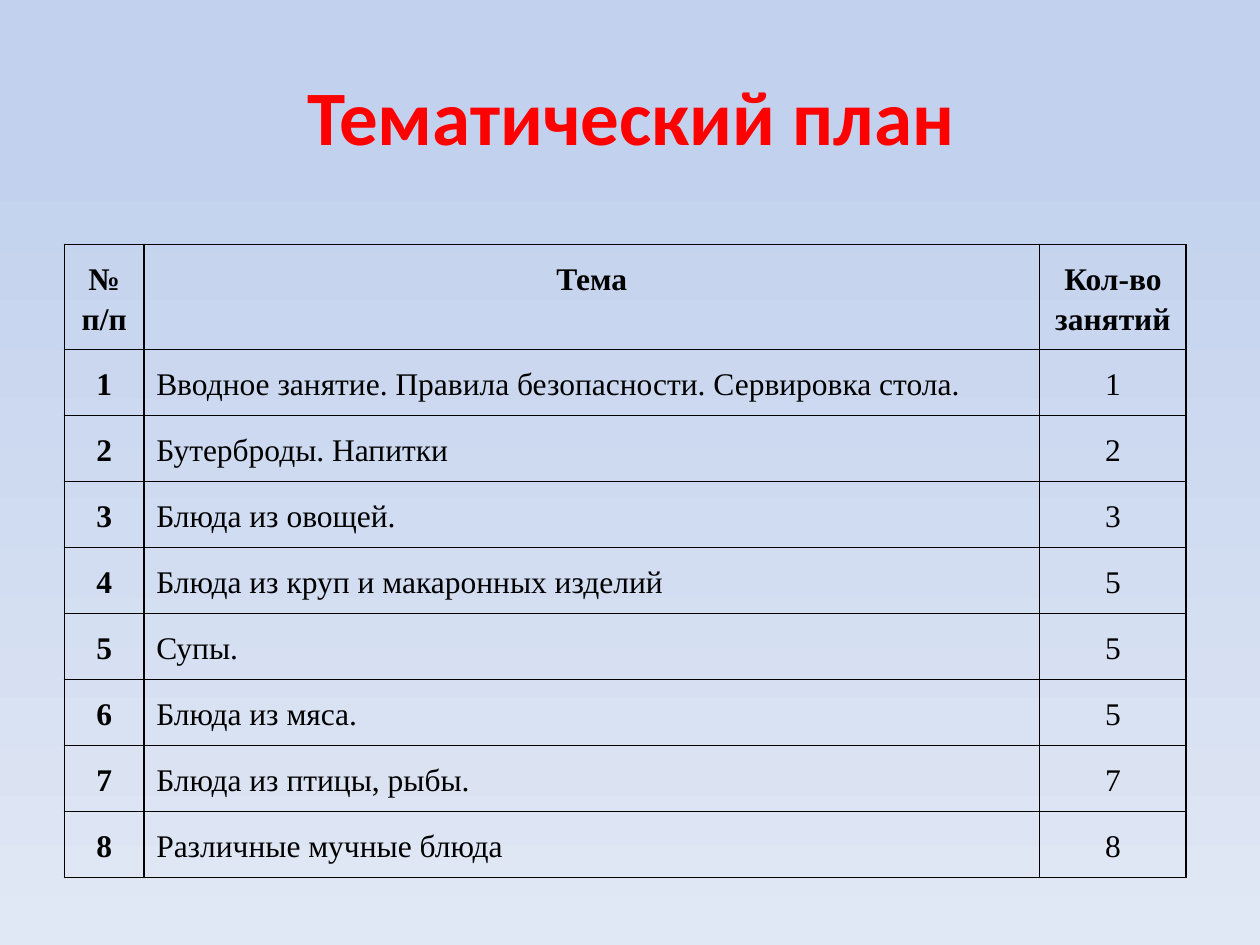
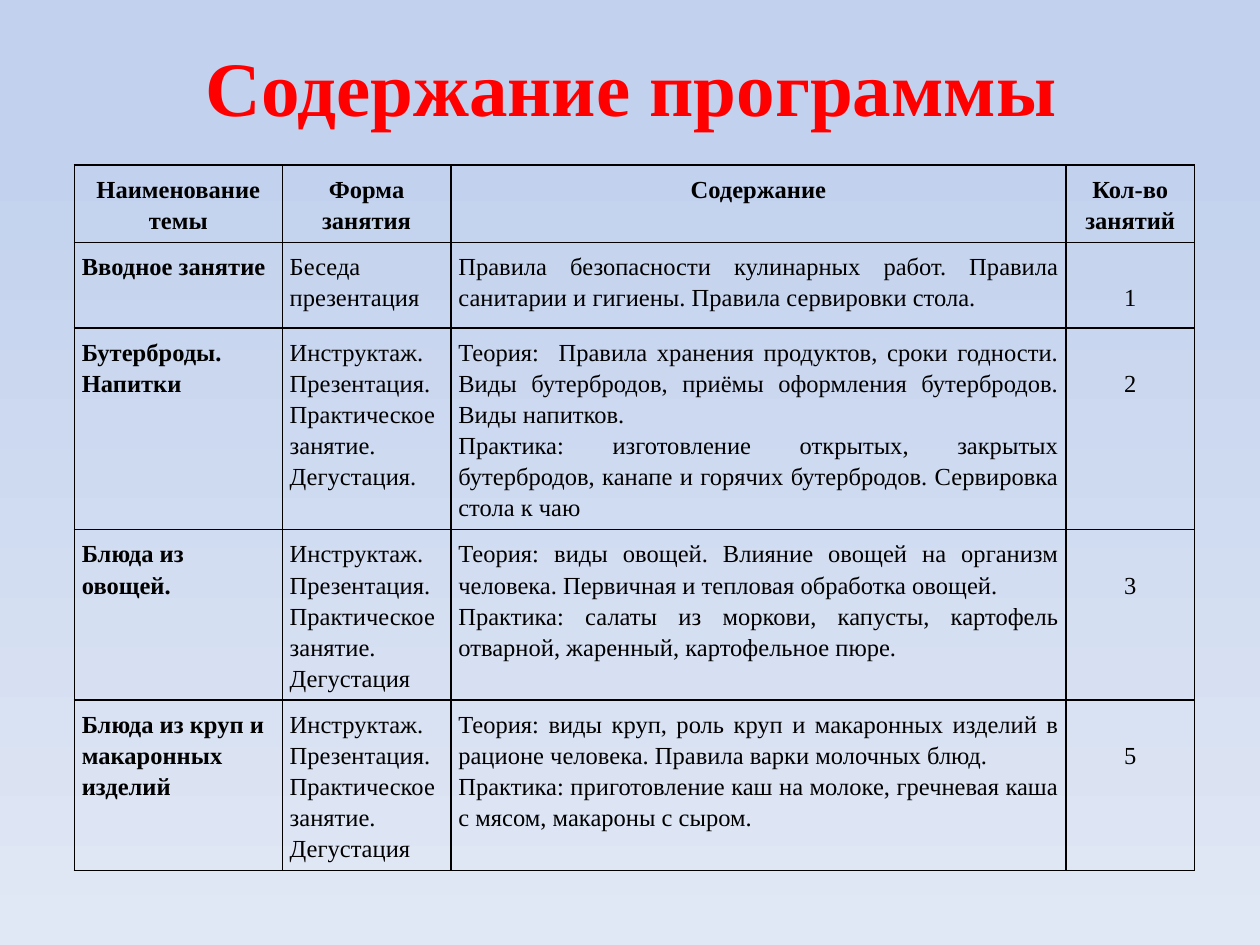
"""Builds two slides of a cookery course: the topic plan and the programme contents."""
import pptx
import pptx.util
import pptx.dml.color
import pptx.enum.text
import pptx.oxml
import pptx.oxml.ns

Cm, Pt = pptx.util.Cm, pptx.util.Pt
LEFT, CENTER, JUSTIFY = (
    pptx.enum.text.PP_ALIGN.LEFT,
    pptx.enum.text.PP_ALIGN.CENTER,
    pptx.enum.text.PP_ALIGN.JUSTIFY,
)
COLORS = {"sky": "C2D1ED", "pale": "E1E8F5", "title": "FF0000", "ink": "000000"}
TABLE_FONT = "Times New Roman"
PRACTICE = "Инструктаж. Презентация. Практическое занятие. Дегустация"

TOPICS = [
    ("Вводное занятие. Правила безопасности. Сервировка стола.", 1),
    ("Бутерброды. Напитки", 2),
    ("Блюда из овощей.", 3),
    ("Блюда из круп и макаронных изделий", 5),
    ("Супы.", 5),
    ("Блюда из мяса.", 5),
    ("Блюда из птицы, рыбы.", 7),
    ("Различные мучные блюда", 8),
]

CONTENTS = [
    ("Вводное занятие", "Беседа презентация",
     "Правила безопасности кулинарных работ. Правила санитарии и гигиены. "
     "Правила сервировки стола.", 1),
    ("Бутерброды. Напитки", PRACTICE + ".",
     "Теория:  Правила хранения продуктов, сроки годности. Виды бутербродов, "
     "приёмы оформления бутербродов. Виды напитков.\n"
     "Практика: изготовление открытых, закрытых бутербродов, канапе и горячих "
     "бутербродов. Сервировка стола к чаю", 2),
    ("Блюда из овощей.", PRACTICE,
     "Теория: виды овощей. Влияние овощей на организм человека. Первичная и "
     "тепловая обработка овощей.\n"
     "Практика: салаты из моркови, капусты, картофель отварной, жаренный, "
     "картофельное пюре.", 3),
    ("Блюда из круп и макаронных изделий", PRACTICE,
     "Теория: виды круп, роль круп и макаронных изделий в рационе человека. "
     "Правила варки молочных блюд.\n"
     "Практика: приготовление каш на молоке, гречневая каша с мясом, макароны "
     "с сыром.", 5),
]

SLIDES = [
    {
        "title": "Тематический план", "title_font": "Calibri",
        "title_top": 0.91, "title_height": 2.82,
        "header": ("№\nп/п", "Тема", "Кол-во занятий"),
        "rows": [(n, *topic) for n, topic in enumerate(TOPICS, 1)],
        "left": 1.3, "top": 4.93, "size": 18, "inset": 0.25, "count_drop": 0,
        "widths": (1.6, 18.06, 2.95), "heights": [2.08] + [1.33] * len(TOPICS),
        "aligns": (CENTER, LEFT, CENTER),
    },
    {
        "title": "Содержание программы", "title_font": TABLE_FONT,
        "title_top": 0.53, "title_height": 2.41,
        "header": ("Наименование темы", "Форма\nзанятия", "Содержание", "Кол-во занятий"),
        "rows": CONTENTS,
        "left": 1.5, "top": 3.33, "size": 14, "inset": 0.15, "count_drop": 0.63,
        "widths": (4.19, 3.4, 12.4, 2.59), "heights": (1.37, 1.73, 3.89, 2.79, 2.79),
        "aligns": (LEFT, LEFT, JUSTIFY, CENTER),
    },
]


def rgb(name):
    return pptx.dml.color.RGBColor.from_string(COLORS[name])


def line_xml(tag, width):
    return pptx.oxml.parse_xml(
        f'<a:{tag} {pptx.oxml.ns.nsdecls("a")} w="{Pt(width)}"><a:solidFill>'
        f'<a:srgbClr val="{COLORS["ink"]}"/></a:solidFill></a:{tag}>')


def add_run(p, text, font, size, color, bold):
    r = p.add_run()
    r.text = text
    r.font.name, r.font.size, r.font.bold = font, Pt(size), bold
    r.font.color.rgb = rgb(color)
    return r


def paint_background(master):
    fill = master.background.fill
    fill.gradient()
    fill.gradient_angle = 270
    for stop, (position, color) in zip(fill.gradient_stops, ((0.16, "sky"), (1, "pale"))):
        stop.position = position
        stop.color.rgb = rgb(color)


def set_title(s, data):
    sp = s.shapes.title
    sp.left, sp.top = Cm(1.3), Cm(data["title_top"])
    sp.width, sp.height = Cm(22.86), Cm(data["title_height"])
    tf = sp.text_frame
    tf.auto_size = pptx.enum.text.MSO_AUTO_SIZE.NONE
    tf.vertical_anchor = pptx.enum.text.MSO_ANCHOR.MIDDLE
    p = tf.paragraphs[0]
    p.alignment = CENTER
    r = add_run(p, data["title"], data["title_font"], 44, "title", True)
    r.font._element.insert(0, line_xml("ln", 0.75))


def fill_cell(cell, text, align, bold, size, inset, drop):
    cell.margin_left = cell.margin_right = cell.margin_bottom = Cm(inset)
    cell.margin_top = Cm(inset + drop)
    tcPr = cell._tc.get_or_add_tcPr()
    for tag in ("lnL", "lnR", "lnT", "lnB"):
        tcPr.append(line_xml(tag, 1))
    cell.fill.background()
    tf = cell.text_frame
    for i, line in enumerate(str(text).split("\n")):
        p = tf.add_paragraph() if i else tf.paragraphs[0]
        p.alignment, p.line_spacing = align, 1.15
        add_run(p, line, TABLE_FONT, size, "ink", bold)


def add_grid(s, data):
    rows = [data["header"], *data["rows"]]
    widths, heights = data["widths"], data["heights"]
    table = s.shapes.add_table(
        len(rows), len(widths), Cm(data["left"]), Cm(data["top"]),
        Cm(sum(widths)), Cm(sum(heights))).table
    table.first_row = table.horz_banding = False
    for column, width in zip(table.columns, widths):
        column.width = Cm(width)
    for row, height in zip(table.rows, heights):
        row.height = Cm(height)
    for i, row in enumerate(rows):
        for j, text in enumerate(row):
            is_header = i == 0
            is_count = not is_header and j == len(row) - 1
            fill_cell(
                table.cell(i, j), text,
                CENTER if is_header else data["aligns"][j],
                is_header or j == 0, data["size"], data["inset"],
                data["count_drop"] if is_count else 0)


def main():
    prs = pptx.Presentation()
    prs.slide_width, prs.slide_height = Cm(25.4), Cm(19.05)
    paint_background(prs.slide_master)
    for data in SLIDES:
        s = prs.slides.add_slide(prs.slide_layouts[5])
        set_title(s, data)
        add_grid(s, data)
    prs.save("out.pptx")


if __name__ == "__main__":
    main()
